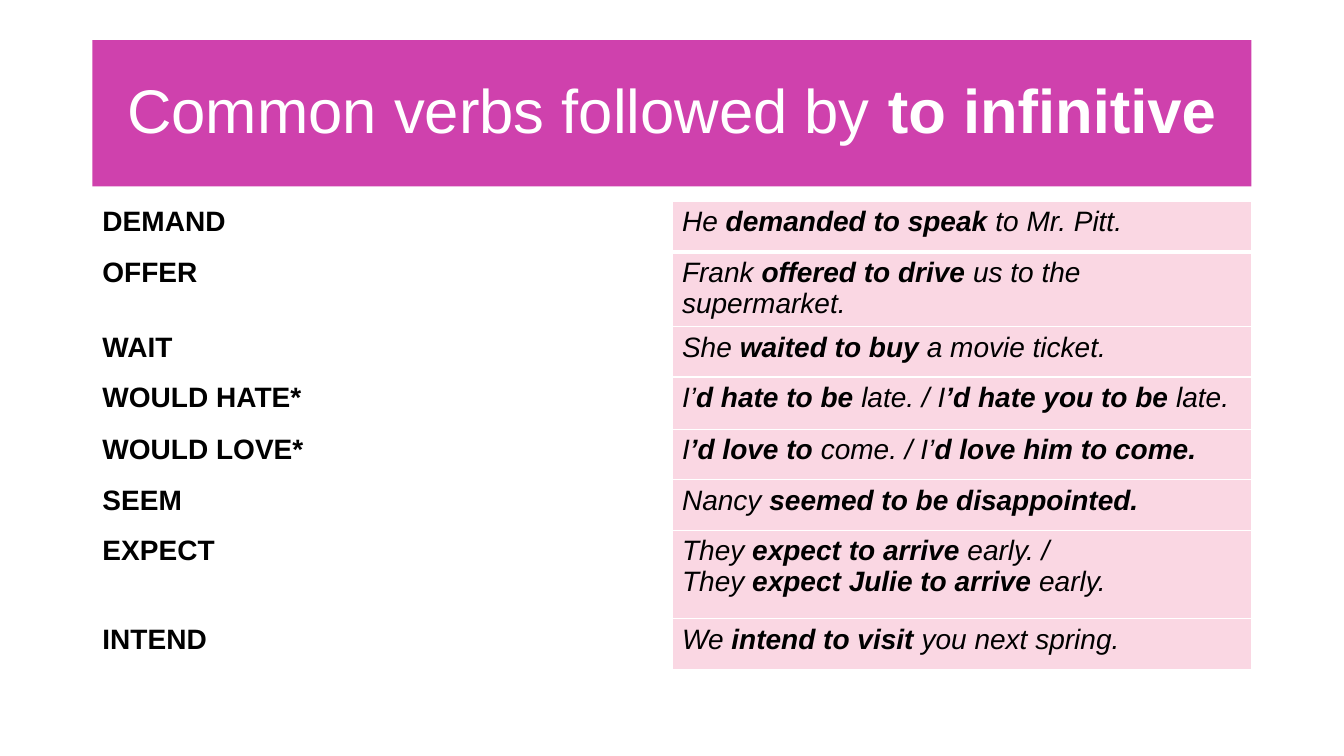
from lxml.etree import SubElement
from pptx import Presentation
from pptx.dml.color import RGBColor
from pptx.enum.shapes import MSO_SHAPE
from pptx.enum.text import MSO_ANCHOR, PP_ALIGN
from pptx.oxml.ns import qn
from pptx.util import Pt

# Each sentence alternates plain and bold parts, starting with plain.
TITLE = ["Common verbs followed by ", "to infinitive"]
VERBS = [
    ("DEMAND", 36, [["He ", "demanded to speak ", "to Mr. Pitt."]]),
    ("OFFER", 53.3, [["Frank ", "offered to drive ", "us to the supermarket."]]),
    ("WAIT", 36, [["She ", "waited to buy ", "a movie ticket."]]),
    ("WOULD HATE*", 37.4, [["I’", "d hate to be ", "late. / I", "’d hate you to be ", "late."]]),
    ("WOULD LOVE*", 36, [["I", "’d love to ", "come. / I’", "d love him to come."]]),
    ("SEEM", 36, [["Nancy ", "seemed to be disappointed."]]),
    ("EXPECT", 63.4, [["They ", "expect to arrive ", "early. /"],
                      ["They ", "expect Julie to arrive ", "early."]]),
    ("INTEND", 36, [["We ", "intend to visit ", "you next spring."]]),
]

FONT = "Arial"
WHITE, BLACK, MAGENTA, PINK = "FFFFFF", "000000", "CF41AD", "FAD7E3"
LEFT, WIDTH = 66, 828
TITLE_TOP, TITLE_HEIGHT, TABLE_TOP = 28.75, 104.4, 144


def color(hex_value):
    return RGBColor.from_string(hex_value)


def write(paragraph, parts, size, hex_value, italic=False):
    """Fill a paragraph with parts that are plain and bold by turns."""
    font = paragraph.font
    font.name, font.size, font.italic = FONT, Pt(size), italic
    font.color.rgb = color(hex_value)
    for index, part in enumerate(parts):
        run = paragraph.add_run()
        run.text = part
        run.font.bold = index % 2 == 1


def style_cell(cell, fill, bottom_width):
    """Give a cell white borders and a solid fill."""
    properties = cell._tc.get_or_add_tcPr()
    for side, width in (("L", 1), ("R", 1), ("T", 1), ("B", bottom_width)):
        line = SubElement(properties, qn(f"a:ln{side}"), w=str(Pt(width)))
        line_fill = SubElement(line, qn("a:solidFill"))
        SubElement(line_fill, qn("a:srgbClr"), val=WHITE)
    cell.fill.solid()
    cell.fill.fore_color.rgb = color(fill)


def add_title(slide):
    banner = slide.shapes.add_shape(MSO_SHAPE.RECTANGLE, Pt(LEFT), Pt(TITLE_TOP),
                                    Pt(WIDTH), Pt(TITLE_HEIGHT))
    banner.shadow.inherit = False
    banner.fill.solid()
    banner.fill.fore_color.rgb = color(MAGENTA)
    banner.line.fill.background()
    frame = banner.text_frame
    frame.word_wrap = True
    frame.vertical_anchor = MSO_ANCHOR.MIDDLE
    paragraph = frame.paragraphs[0]
    paragraph.alignment = PP_ALIGN.CENTER
    paragraph.line_spacing = 0.9
    write(paragraph, TITLE, 44, WHITE)


def add_verb_table(slide):
    total_height = sum(height for _, height, _ in VERBS)
    table = slide.shapes.add_table(len(VERBS), 2, Pt(LEFT), Pt(TABLE_TOP),
                                   Pt(WIDTH), Pt(total_height)).table
    table.first_row = table.horz_banding = False
    for index, (verb, height, sentences) in enumerate(VERBS):
        table.rows[index].height = Pt(height)
        verb_cell, example_cell = table.rows[index].cells
        bottom_width = 3 if index == 0 else 1
        style_cell(verb_cell, WHITE, bottom_width)
        style_cell(example_cell, PINK, bottom_width)
        write(verb_cell.text_frame.paragraphs[0], ["", verb][1:], 20, BLACK)
        verb_cell.text_frame.paragraphs[0].runs[0].font.bold = True
        frame = example_cell.text_frame
        for number, sentence in enumerate(sentences):
            paragraph = frame.add_paragraph() if number else frame.paragraphs[0]
            write(paragraph, sentence, 20, BLACK, italic=True)


def main():
    presentation = Presentation()
    presentation.slide_width, presentation.slide_height = Pt(960), Pt(540)
    slide = presentation.slides.add_slide(presentation.slide_layouts[6])
    add_title(slide)
    add_verb_table(slide)
    presentation.save("out.pptx")


if __name__ == "__main__":
    main()
